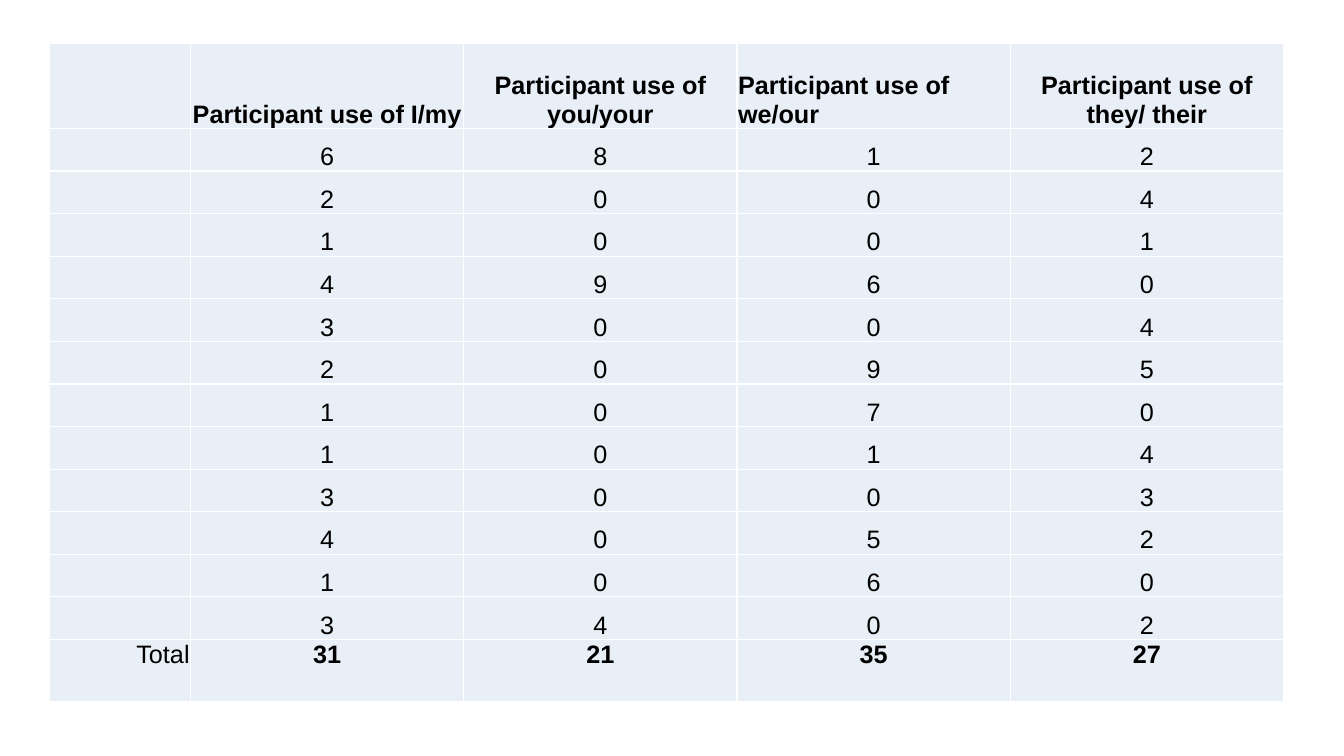
from dataclasses import dataclass

from lxml.etree import SubElement
from pptx import Presentation
from pptx.dml.color import RGBColor
from pptx.enum.text import MSO_ANCHOR, PP_ALIGN
from pptx.oxml.ns import qn
from pptx.table import Table, _Cell
from pptx.util import Emu, Inches, Pt

BLACK = RGBColor(0x00, 0x00, 0x00)
WHITE = RGBColor(0xFF, 0xFF, 0xFF)
PALE_BLUE = RGBColor(0xE9, 0xEF, 0xF7)
FONT = "Arial"

# Grid: row heights and column widths follow from the slide size
SLIDE_W, SLIDE_H = Inches(13.33), Inches(7.5)
LEFT, TOP = Inches(0.49), Inches(0.43)
ROW_H = Emu(int(SLIDE_H / 17.75))
HEADER_H, TOTAL_H = Emu(2 * ROW_H), Inches(0.62)
LABEL_W, COUNT_W = Inches(1.4), Inches(2.71)


@dataclass
class Pronoun:
    heading: str
    counts: list[int]
    heading_align: PP_ALIGN = PP_ALIGN.CENTER


PRONOUNS = [
    Pronoun("Participant use of I/my", [6, 2, 1, 4, 3, 2, 1, 1, 3, 4, 1, 3]),
    Pronoun("Participant use of you/your", [8, 0, 0, 9, 0, 0, 0, 0, 0, 0, 0, 4]),
    Pronoun("Participant use of we/our", [1, 0, 0, 6, 0, 9, 7, 1, 0, 5, 6, 0], PP_ALIGN.LEFT),
    Pronoun("Participant use of they/ their", [2, 4, 1, 0, 4, 5, 0, 4, 3, 2, 0, 2]),
]


def style_cell(cell: _Cell) -> None:
    """Give a cell its white borders, pale fill and tight margins."""
    cell.margin_left = cell.margin_right = cell.margin_top = Inches(0.01)
    cell.margin_bottom = 0
    tc_pr = cell._tc.get_or_add_tcPr()
    for side in ("a:lnL", "a:lnR", "a:lnT", "a:lnB"):
        ln = SubElement(tc_pr, qn(side), w=str(Pt(1)))
        fill = SubElement(ln, qn("a:solidFill"))
        SubElement(fill, qn("a:srgbClr"), val=str(WHITE))
    cell.fill.solid()
    cell.fill.fore_color.rgb = PALE_BLUE


def write(cell: _Cell, text: str, *, bold: bool = False,
          align: PP_ALIGN = PP_ALIGN.CENTER,
          anchor: MSO_ANCHOR = MSO_ANCHOR.BOTTOM) -> None:
    cell.vertical_anchor = anchor
    p = cell.text_frame.paragraphs[0]
    p.alignment = align
    r = p.add_run()
    r.text = text
    r.font.name, r.font.size, r.font.bold = FONT, Pt(18), bold
    r.font.color.rgb = BLACK


def fill_table(table: Table) -> None:
    total_row = len(table.rows) - 1
    write(table.cell(total_row, 0), "Total", align=PP_ALIGN.RIGHT, anchor=MSO_ANCHOR.TOP)
    for col, pronoun in enumerate(PRONOUNS, start=1):
        write(table.cell(0, col), pronoun.heading, bold=True, align=pronoun.heading_align)
        for row, count in enumerate(pronoun.counts, start=1):
            write(table.cell(row, col), str(count))
        write(table.cell(total_row, col), str(sum(pronoun.counts)), bold=True,
              anchor=MSO_ANCHOR.TOP)


def main() -> None:
    prs = Presentation()
    prs.slide_width, prs.slide_height = SLIDE_W, SLIDE_H
    slide = prs.slides.add_slide(prs.slide_layouts[6])

    # Table frame
    widths = [LABEL_W] + [COUNT_W] * len(PRONOUNS)
    heights = [HEADER_H] + [ROW_H] * len(PRONOUNS[0].counts) + [TOTAL_H]
    table = slide.shapes.add_table(len(heights), len(widths), LEFT, TOP,
                                   Emu(sum(widths)), Emu(sum(heights))).table
    table.first_row = table.horz_banding = False
    for column, width in zip(table.columns, widths):
        column.width = width
    for row, height in zip(table.rows, heights):
        row.height = height

    # Cells
    for cell in table.iter_cells():
        style_cell(cell)
    fill_table(table)

    prs.save("out.pptx")


if __name__ == "__main__":
    main()
